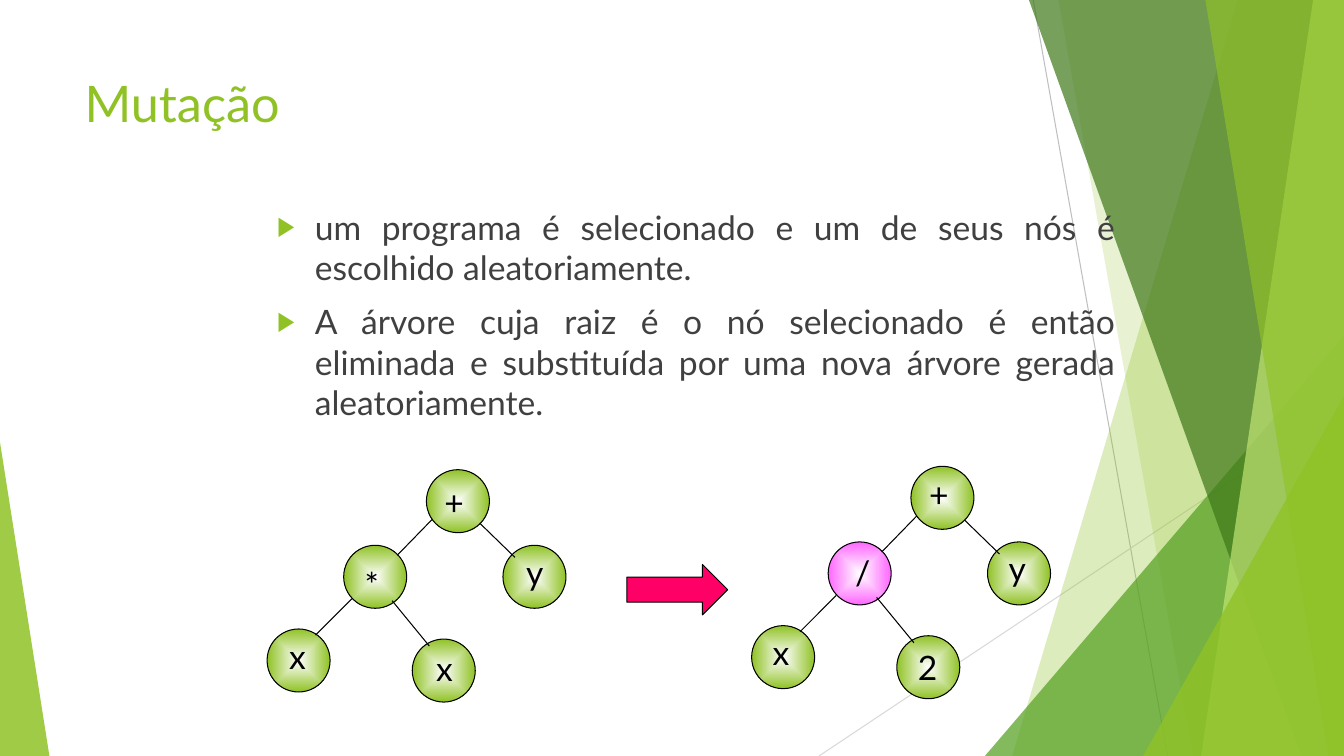
from lxml import etree
from pptx import Presentation
from pptx.dml.color import RGBColor
from pptx.enum import shapes as s, text as t
from pptx.oxml import ns
from pptx.util import Pt

WHITE = RGBColor(0xFF, 0xFF, 0xFF)
BLACK = RGBColor(0, 0, 0)
GRAY = RGBColor(0x40, 0x40, 0x40)
SILVER = RGBColor(0xBF, 0xBF, 0xBF)
PALE = RGBColor(0xD9, 0xD9, 0xD9)
LIME = RGBColor(0x90, 0xC2, 0x26)
GREEN = RGBColor(0x54, 0xA0, 0x21)
DARK = RGBColor(0x3F, 0x78, 0x19)
LIGHT = RGBColor(0xC0, 0xE4, 0x74)
PINK = RGBColor(0xFF, 0x66, 0xFF)
RED = RGBColor(0xFF, 0x00, 0x66)

WIDTH, HEIGHT = 960, 540
NODE = 45
# Place of each node from the tree's top left corner
SPOTS = [(113.8, 0), (54.7, 54), (103.7, 121), (0, 113.8), (168.5, 54)]
EDGES = [(118.1, 35.3, 92.9, 61.2), (151.9, 38.2, 177.1, 62.7),
         (60.5, 92.2, 34.6, 118.1), (89.3, 93.6, 115.9, 126)]
# Label, its offset within the node, node colour
BEFORE = [("+", 5.8, 5, LIME), ("*", 7.9, 10, LIME), ("x", 10, 2.9, LIME),
          ("x", 8.6, 1.4, LIME), ("y", 9.4, 1.4, LIME)]
AFTER = [("+", 5.8, 2.2, LIME), ("/", 12.2, 3.6, PINK), ("2", 7.9, 4.3, LIME),
         ("x", 7.9, 0.7, LIME), ("y", 7.9, 0.7, LIME)]
POINTS = [
    "um programa é selecionado e um de seus nós é escolhido aleatoriamente.",
    "A árvore cuja raiz é o nó selecionado é então eliminada e substituída "
    "por uma nova árvore gerada aleatoriamente.",
]


def add_xml(parent, tag, **attrs):
    return etree.SubElement(parent, ns.qn(tag), attrs)


def add_line(group, ends, color):
    line = group.add_connector(s.MSO_CONNECTOR.STRAIGHT, *map(Pt, ends))
    line.line.color.rgb = color
    line.line.width = Pt(0.75)
    add_xml(line._element.spPr, "a:effectLst")


def paint(shape, color, alpha):
    """Fill a borderless shape; alpha is its opacity in percent."""
    shape.shadow.inherit = False
    shape.line.fill.background()
    shape.fill.solid()
    shape.fill.fore_color.rgb = color
    tone = shape._element.spPr.find(".//" + ns.qn("a:srgbClr"))
    add_xml(tone, "a:alpha", val=str(alpha * 1000))


def add_band(group, top, foot, color, alpha):
    """Draw a facet from its slanted left side to the slide's right edge."""
    form = group.build_freeform(Pt(top), 0)
    corners = [(WIDTH, 0), (WIDTH, HEIGHT), (foot, HEIGHT)]
    form.add_line_segments([(Pt(x), Pt(y)) for x, y in corners])
    paint(form.convert_to_shape(), color, alpha)


def add_wedge(group, left, top, width, peak, color, alpha):
    wedge = group.add_shape(s.MSO_SHAPE.ISOSCELES_TRIANGLE, Pt(left), Pt(top),
                            Pt(width), Pt(HEIGHT - top))
    wedge.adjustments[0] = peak
    paint(wedge, color, alpha)


def add_facets(slide):
    group = slide.shapes.add_group_shape().shapes
    add_line(group, (738, 0, 834, HEIGHT), SILVER)
    add_line(group, (WIDTH, 290, 585, HEIGHT), PALE)
    add_band(group, 884, 723, LIME, 30)
    add_band(group, 756, 852, LIME, 20)
    add_wedge(group, 703.5, 240, 256.5, 1, GREEN, 72)
    add_band(group, 735, 929.5, DARK, 70)
    add_band(group, 938, 858, LIGHT, 70)
    add_band(group, 861, 949, LIME, 65)
    add_wedge(group, 816.5, 283, 143.5, 1, LIME, 80)
    add_wedge(group, 0, 316, 35.3, 0, LIME, 85)


def add_text(group, box, lines, size, color):
    frame = group.add_textbox(*map(Pt, box)).text_frame
    frame.word_wrap = True
    look = {"name": "Lato", "size": Pt(size)}
    for i, line in enumerate(lines):
        para = frame.add_paragraph() if i else frame.paragraphs[0]
        run = para.add_run()
        run.text = line
        for key, value in look.items():
            setattr(run.font, key, value)
        run.font.color.rgb = color
    return frame


def add_bullets(frame):
    for para in frame.paragraphs:
        para.alignment = t.PP_ALIGN.JUSTIFY
        para.space_before = Pt(10)
        props = para._p.get_or_add_pPr()
        props.set("marL", str(Pt(27)))
        props.set("indent", str(-Pt(27)))
        add_xml(add_xml(props, "a:buClr"), "a:srgbClr", val=str(LIME))
        add_xml(props, "a:buSzPct", val="80000")
        add_xml(props, "a:buFont", typeface="Arial")
        add_xml(props, "a:buChar", char="▶")


def outline(shape):
    shape.shadow.inherit = False
    shape.line.color.rgb = BLACK
    shape.line.width = Pt(0.75)


def glow(shape, color):
    """Blend from a white centre out to the colour."""
    shape.fill.gradient()
    for stop, tone, place in zip(shape.fill.gradient_stops, (WHITE, color), (0, 1)):
        stop.color.rgb = tone
        stop.position = place
    grad = shape._element.spPr.find(ns.qn("a:gradFill"))
    grad.remove(grad.find(ns.qn("a:lin")))
    half = dict.fromkeys("ltrb", "50000")
    add_xml(add_xml(grad, "a:path", path="shape"), "a:fillToRect", **half)


def add_tree(slide, left, top, nodes):
    group = slide.shapes.add_group_shape().shapes
    for (dx, dy), (label, tx, ty, color) in zip(SPOTS, nodes):
        x, y = left + dx, top + dy
        node = group.add_shape(s.MSO_SHAPE.OVAL, Pt(x), Pt(y), Pt(NODE), Pt(NODE))
        outline(node)
        glow(node, color)
        add_text(group, (x + tx, y + ty, 39.6, 36), [label], 24, BLACK)
    for x1, y1, x2, y2 in EDGES:
        add_line(group, (left + x1, top + y1, left + x2, top + y2), BLACK)


def add_arrow(slide, box):
    arrow = slide.shapes.add_shape(s.MSO_SHAPE.RIGHT_ARROW, *map(Pt, box))
    outline(arrow)
    arrow.fill.solid()
    arrow.fill.fore_color.rgb = RED


def main():
    deck = Presentation()
    deck.slide_width, deck.slide_height = Pt(WIDTH), Pt(HEIGHT)
    slide = deck.slides.add_slide(deck.slide_layouts[6])
    slide.background.fill.solid()
    slide.background.fill.fore_color.rgb = WHITE
    add_facets(slide)
    add_text(slide.shapes, (53.3, 48, 677, 104), ["Mutação"], 36, LIME)
    add_bullets(add_text(slide.shapes, (190.8, 144, 612.7, 160), POINTS, 24, GRAY))
    add_tree(slide, 190.8, 335.5, BEFORE)
    add_tree(slide, 536.9, 333.1, AFTER)
    add_arrow(slide, (447.8, 403.2, 72, 36))
    deck.save("out.pptx")


if __name__ == "__main__":
    main()
